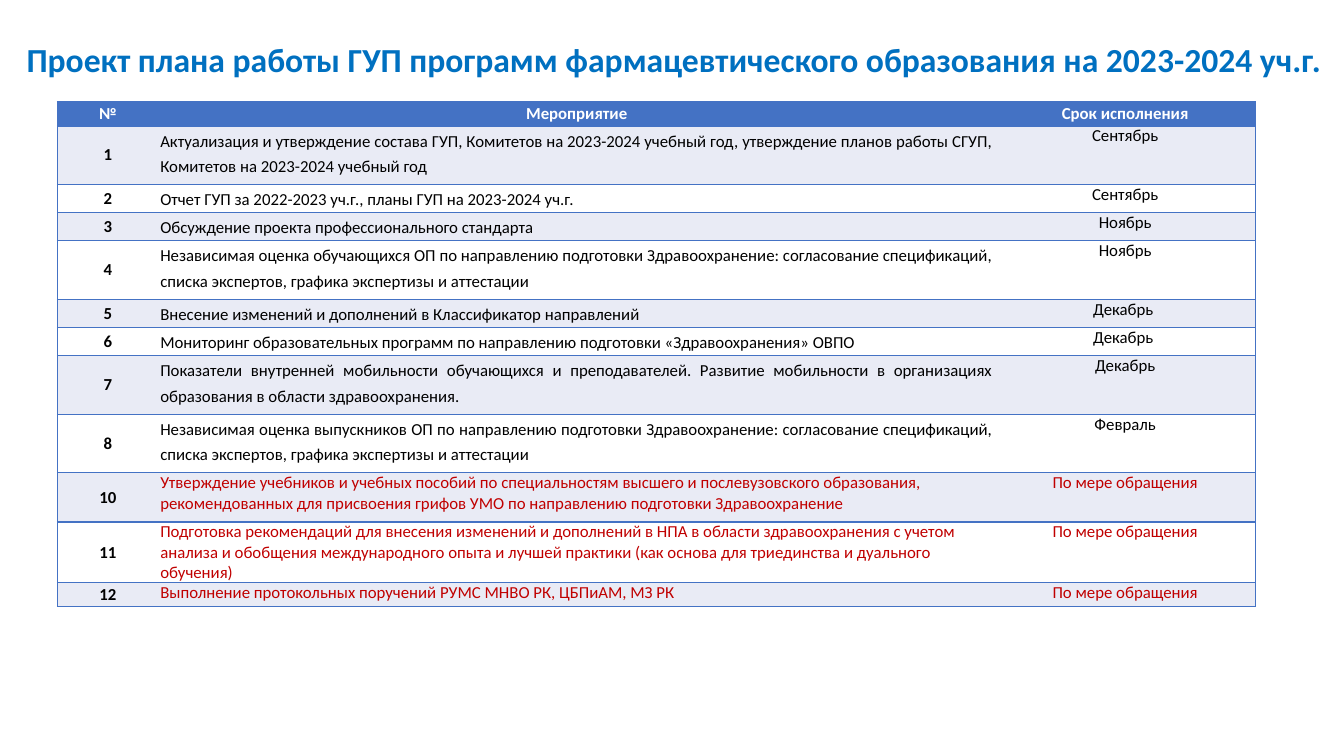
from lxml import etree
from pptx import Presentation
from pptx import util as u
from pptx.dml.color import RGBColor
from pptx.enum import text
from pptx.oxml import ns

# Content
TITLE = "Проект плана работы ГУП программ фармацевтического образования на 2023-2024 уч.г."
HEADER = ("№", "Мероприятие", "Срок исполнения")
ON_REQUEST = "По мере обращения"
# Number, activity, deadline, row height
ACTIVITIES = [
    ("1", "Актуализация и утверждение состава ГУП, Комитетов на 2023-2024 учебный год, "
     "утверждение планов работы СГУП, Комитетов на 2023-2024 учебный год", "Сентябрь", 0.58),
    ("2", "Отчет ГУП за 2022-2023 уч.г., планы ГУП на 2023-2024 уч.г.", "Сентябрь", 0.28),
    ("3", "Обсуждение проекта профессионального стандарта", "Ноябрь", 0.28),
    ("4", "Независимая оценка обучающихся ОП по направлению подготовки Здравоохранение: "
     "согласование спецификаций, списка экспертов, графика экспертизы и аттестации", "Ноябрь", 0.58),
    ("5", "Внесение изменений и дополнений в Классификатор направлений", "Декабрь ", 0.28),
    ("6", "Мониторинг образовательных программ по направлению подготовки "
     "«Здравоохранения» ОВПО", "Декабрь ", 0.28),
    ("7", "Показатели внутренней мобильности обучающихся и преподавателей. Развитие мобильности "
     "в организациях образования в области здравоохранения.", "Декабрь", 0.58),
    ("8", "Независимая оценка выпускников ОП по направлению подготовки Здравоохранение: "
     "согласование спецификаций, списка экспертов, графика экспертизы и аттестации ", "Февраль", 0.58),
    ("10", "Утверждение учебников и учебных пособий по специальностям высшего и послевузовского "
     "образования, рекомендованных для присвоения грифов УМО по направлению подготовки "
     "Здравоохранение", ON_REQUEST, 0.49),
    ("11", "Подготовка рекомендаций для внесения изменений и дополнений в НПА в области "
     "здравоохранения с учетом анализа и обобщения международного опыта и лучшей практики "
     "(как основа для триединства и дуального обучения)", ON_REQUEST, 0.49),
    ("12", "Выполнение протокольных поручений РУМС МНВО РК, ЦБПиАМ, МЗ РК", ON_REQUEST, 0.24),
]
COLORS = {"title": "0070C0", "accent": "4472C4", "band": "E9EBF5", "white": "FFFFFF",
          "text": "000000", "request": "C00000"}
FONT = "Calibri"
COLUMN_WIDTHS = (1, 8.3, 2.58)
HEADER_HEIGHT = 0.24


def format_text(paragraph, size, color, bold, align):
    paragraph.alignment = align
    for run in paragraph.runs:
        run.font.name = FONT
        run.font.size = u.Pt(size)
        run.font.bold = bold
        run.font.color.rgb = RGBColor.from_string(COLORS[color])


def set_borders(cell, visible):
    properties = cell._tc.get_or_add_tcPr()
    for side in "LRTB":
        line = etree.SubElement(properties, ns.qn(f"a:ln{side}"), w=str(u.Pt(1)))
        if side in visible:
            fill = etree.SubElement(line, ns.qn("a:solidFill"))
            etree.SubElement(fill, ns.qn("a:srgbClr"), val=COLORS["accent"])
        else:
            etree.SubElement(line, ns.qn("a:noFill"))


def fill_cell(cell, words, fill, color, bold, align, middle):
    cell.margin_left = cell.margin_right = u.Inches(0.02)
    cell.margin_top = cell.margin_bottom = 0
    cell.vertical_anchor = text.MSO_ANCHOR.MIDDLE if middle else text.MSO_ANCHOR.TOP
    cell.text_frame.text = words
    format_text(cell.text_frame.paragraphs[0], 12, color, bold, align)
    cell.fill.solid()
    cell.fill.fore_color.rgb = RGBColor.from_string(COLORS[fill])


presentation = Presentation()
presentation.slide_width, presentation.slide_height = u.Inches(13.33), u.Inches(7.5)
slide = presentation.slides.add_slide(presentation.slide_layouts[6])
ALIGN = text.PP_ALIGN

# Title
title = slide.shapes.add_textbox(u.Inches(0.16), u.Inches(0.34), u.Inches(13.05), u.Inches(0.5))
title.text_frame.word_wrap = False
title.text_frame.text = TITLE
format_text(title.text_frame.paragraphs[0], 24, "title", True, ALIGN.CENTER)

# Work plan table
heights = [HEADER_HEIGHT] + [activity[3] for activity in ACTIVITIES]
table = slide.shapes.add_table(len(heights), len(COLUMN_WIDTHS), u.Inches(0.57), u.Inches(1.01),
                               u.Inches(sum(COLUMN_WIDTHS)), u.Inches(sum(heights))).table
for column, width in zip(table.columns, COLUMN_WIDTHS):
    column.width = u.Inches(width)
for row, height in zip(table.rows, heights):
    row.height = u.Inches(height)
    for cell, sides in zip(row.cells, ("LTB", "TB", "RTB")):
        set_borders(cell, sides)

# Header row
for column, words in enumerate(HEADER):
    fill_cell(table.cell(0, column), words, "accent", "white", True, ALIGN.CENTER, True)

# Activity rows
for row, (number, activity, deadline, height) in enumerate(ACTIVITIES, 1):
    band = "band" if row % 2 else "white"
    on_request = deadline == ON_REQUEST
    color = "request" if on_request else "text"
    number_cell, activity_cell, deadline_cell = table.rows[row].cells
    fill_cell(number_cell, number, band, "text", True, ALIGN.CENTER, True)
    fill_cell(activity_cell, activity, band, color, False,
              ALIGN.LEFT if on_request else ALIGN.JUSTIFY, False)
    if not on_request:
        activity_cell.text_frame.paragraphs[0].line_spacing = 1.25
    fill_cell(deadline_cell, deadline, band, color, False, ALIGN.CENTER, False)

presentation.save("out.pptx")
